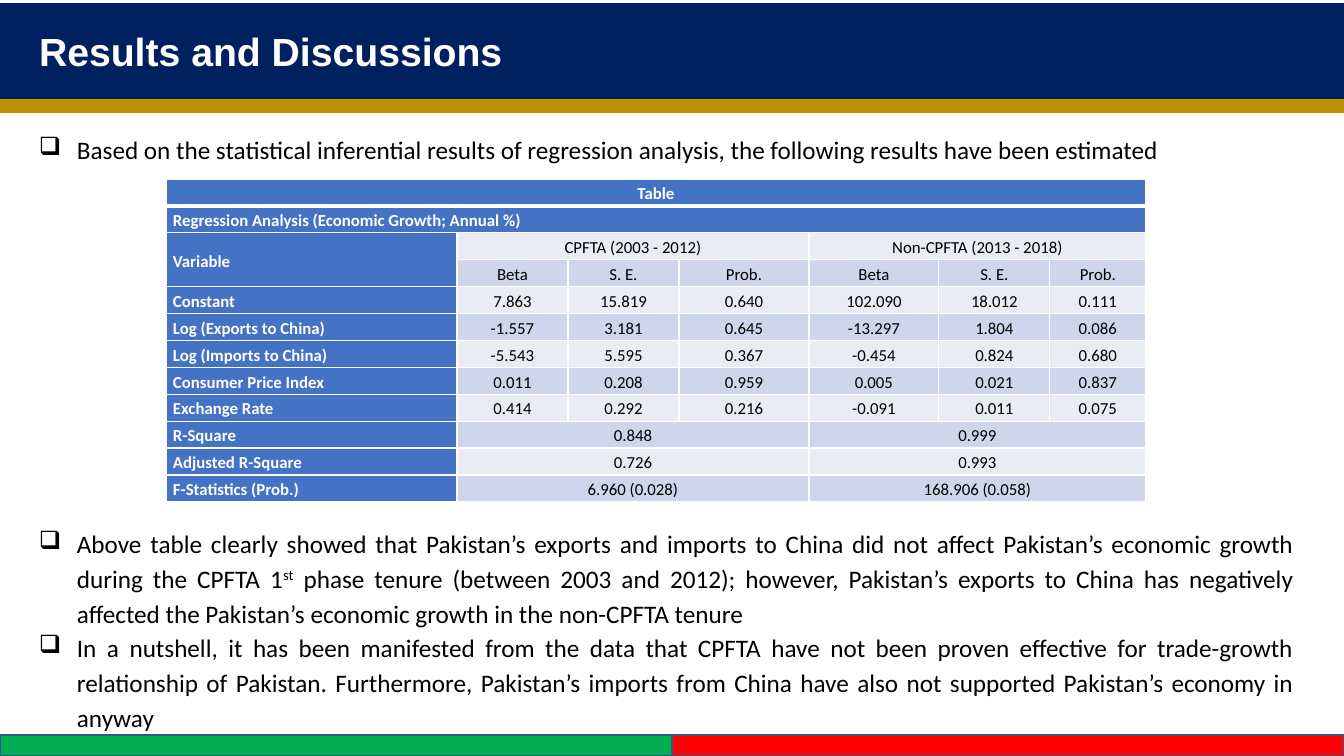
from dataclasses import dataclass

from lxml.etree import SubElement
from pptx import Presentation
from pptx.dml.color import RGBColor as RGB
from pptx.enum.shapes import MSO_CONNECTOR as Link, MSO_SHAPE as Shape
from pptx.enum.text import MSO_ANCHOR as Anchor, PP_ALIGN as Align
from pptx.oxml import parse_xml
from pptx.oxml.ns import nsdecls, qn
from pptx.util import Pt

SCALE = 12192000 / 1344


@dataclass(frozen=True)
class Theme:
    navy: str = "002060"
    gold: str = "BF9000"
    green: str = "00B050"
    red: str = "FF0000"
    edge: str = "325491"
    head: str = "4472C4"
    bands: tuple = ("E9EBF5", "CFD5EA")
    white: str = "FFFFFF"
    black: str = "000000"
    title: int = 28
    body: int = 18
    cell: int = 12
    sans: str = "Arial"
    text: str = "Calibri"
    lead: float = 1.15


def px(*vals):
    return [round(v * SCALE) for v in vals]


class Deck:
    def __init__(self, theme):
        self.theme = theme
        self.prs = Presentation()
        self.prs.slide_width, self.prs.slide_height = px(1344, 756)
        self.slide = self.prs.slides.add_slide(self.prs.slide_layouts[6])
        self.shapes = self.slide.shapes

    def font(self, para, size, color, bold=False, name=None):
        font = para.font
        font.size, font.bold = Pt(size), bold
        font.name = name or self.theme.text
        font.color.rgb = RGB.from_string(color)

    def bar(self, box, fill, edge=None):
        bar = self.shapes.add_shape(Shape.RECTANGLE, *px(*box))
        bar.shadow.inherit = False
        bar.fill.solid()
        bar.fill.fore_color.rgb = RGB.from_string(fill)
        if edge:
            bar.line.color.rgb = RGB.from_string(edge)
            bar.line.width = Pt(1)
        else:
            bar.line.fill.background()
        return bar

    def title(self, box, text):
        frame = self.bar(box, self.theme.navy).text_frame
        frame.margin_left, = px(39)
        frame.vertical_anchor = Anchor.MIDDLE
        para = frame.paragraphs[0]
        para.text, para.alignment = text, Align.LEFT
        self.font(para, self.theme.title, self.theme.white, True, self.theme.sans)

    def rule(self, ends, color, width):
        rule = self.shapes.add_connector(Link.STRAIGHT, *px(*ends))
        rule.line.color.rgb = RGB.from_string(color)
        rule.line.width = Pt(width)
        SubElement(rule._element.spPr, qn("a:effectLst"))

    def list(self, box, items):
        """Add a bulleted box; text between carets is raised."""
        frame = self.shapes.add_textbox(*px(*box)).text_frame
        frame.word_wrap = True
        for n, item in enumerate(items):
            para = frame.add_paragraph() if n else frame.paragraphs[0]
            props = para._p.get_or_add_pPr()
            indent, = px(38)
            props.set("marL", str(indent))
            props.set("indent", str(-indent))
            SubElement(props, qn("a:buChar")).set("char", "❑")
            para.alignment = Align.JUSTIFY
            para.line_spacing = self.theme.lead
            self.font(para, self.theme.body, self.theme.black)
            for k, part in enumerate(item.split("^")):
                run = para.add_run()
                run.text = part
                if k % 2:
                    run._r.get_or_add_rPr().set("baseline", "30000")

    def edges(self, cell, top, base):
        props = cell._tc.get_or_add_tcPr()
        for n, (side, width) in enumerate(zip("LRTB", (1, 1, top, base))):
            props.insert(n, parse_xml(
                f'<a:ln{side} {nsdecls("a")} w="{Pt(width)}"><a:solidFill>'
                f'<a:srgbClr val="{self.theme.white}"/></a:solidFill></a:ln{side}>'))

    def fill(self, cell, row, col):
        look = self.theme
        label = row < 2 or col == 0
        cell.fill.solid()
        cell.fill.fore_color.rgb = RGB.from_string(
            look.head if label else look.bands[row % 2])
        self.edges(cell, 3 if row == 1 else 1, 3 if row == 0 else 1)
        cell.margin_left, cell.margin_right = px(7, 7)
        cell.margin_top = cell.margin_bottom = 0
        cell.vertical_anchor = Anchor.MIDDLE
        para = cell.text_frame.paragraphs[0]
        para.alignment = Align.LEFT if label and row else Align.CENTER
        para.line_spacing = look.lead
        self.font(para, look.cell, look.white if label else look.black, label)

    def table(self, box, widths, rows):
        """Add a table; a short row spreads its values over equal spans."""
        grid = self.shapes.add_table(len(rows), len(widths), *px(*box)).table
        grid.first_row = grid.horz_banding = False
        for col, width in zip(grid.columns, px(*widths)):
            col.width = width
        for r, row in enumerate(rows):
            for c in range(len(widths)):
                self.fill(grid.cell(r, c), r, c)
            if len(row) == 1:
                spots = {0: len(widths)}
            else:
                span = (len(widths) - 1) // (len(row) - 1)
                spots = {0: 1} | {c: span for c in range(1, len(widths), span)}
            for (c, span), text in zip(spots.items(), row):
                if text:
                    grid.cell(r, c).text_frame.paragraphs[0].add_run().text = text
                if span > 1:
                    grid.cell(r, c).merge(grid.cell(r, c + span - 1))
                if not text:
                    grid.cell(r - 1, c).merge(grid.cell(r, c))


ROWS = [
    ["Table"],
    ["Regression Analysis (Economic Growth; Annual %)"],
    ["Variable", "CPFTA (2003 - 2012)", "Non-CPFTA (2013 - 2018)"],
    ["", *["Beta", "S. E.", "Prob."] * 2],
    ["Constant", "7.863", "15.819", "0.640", "102.090", "18.012", "0.111"],
    ["Log (Exports to China)", "-1.557", "3.181", "0.645", "-13.297", "1.804", "0.086"],
    ["Log (Imports to China)", "-5.543", "5.595", "0.367", "-0.454", "0.824", "0.680"],
    ["Consumer Price Index", "0.011", "0.208", "0.959", "0.005", "0.021", "0.837"],
    ["Exchange Rate", "0.414", "0.292", "0.216", "-0.091", "0.011", "0.075"],
    ["R-Square", "0.848", "0.999"],
    ["Adjusted R-Square", "0.726", "0.993"],
    ["F-Statistics (Prob.)", "6.960 (0.028)", "168.906 (0.058)"],
]
INTRO = [
    "Based on the statistical inferential results of regression analysis, "
    "the following results have been estimated",
]
NOTES = [
    "Above table clearly showed that Pakistan’s exports and imports to China did not "
    "affect Pakistan’s economic growth during the CPFTA 1^st^ phase tenure (between "
    "2003 and 2012); however, Pakistan’s exports to China has negatively affected the "
    "Pakistan’s economic growth in the non-CPFTA tenure",
    "In a nutshell, it has been manifested from the data that CPFTA have not been "
    "proven effective for trade-growth relationship of Pakistan. Furthermore, "
    "Pakistan’s imports from China have also not supported Pakistan’s economy in anyway",
]


def main():
    look = Theme()
    deck = Deck(look)
    deck.title((0, 3, 1344, 96), "Results and Discussions")
    deck.rule((0, 106, 1344, 106), look.gold, 10)
    deck.list((29, 125, 1275, 45), INTRO)
    deck.list((29, 519, 1275, 220), NOTES)
    deck.table((166, 179, 980, 323), (291, 111, 111, 130, 130, 111, 96), ROWS)
    for n, color in enumerate((look.green, look.red)):
        deck.bar((672 * n, 735, 672, 21), color, look.edge)
    deck.prs.save("out.pptx")


if __name__ == "__main__":
    main()
